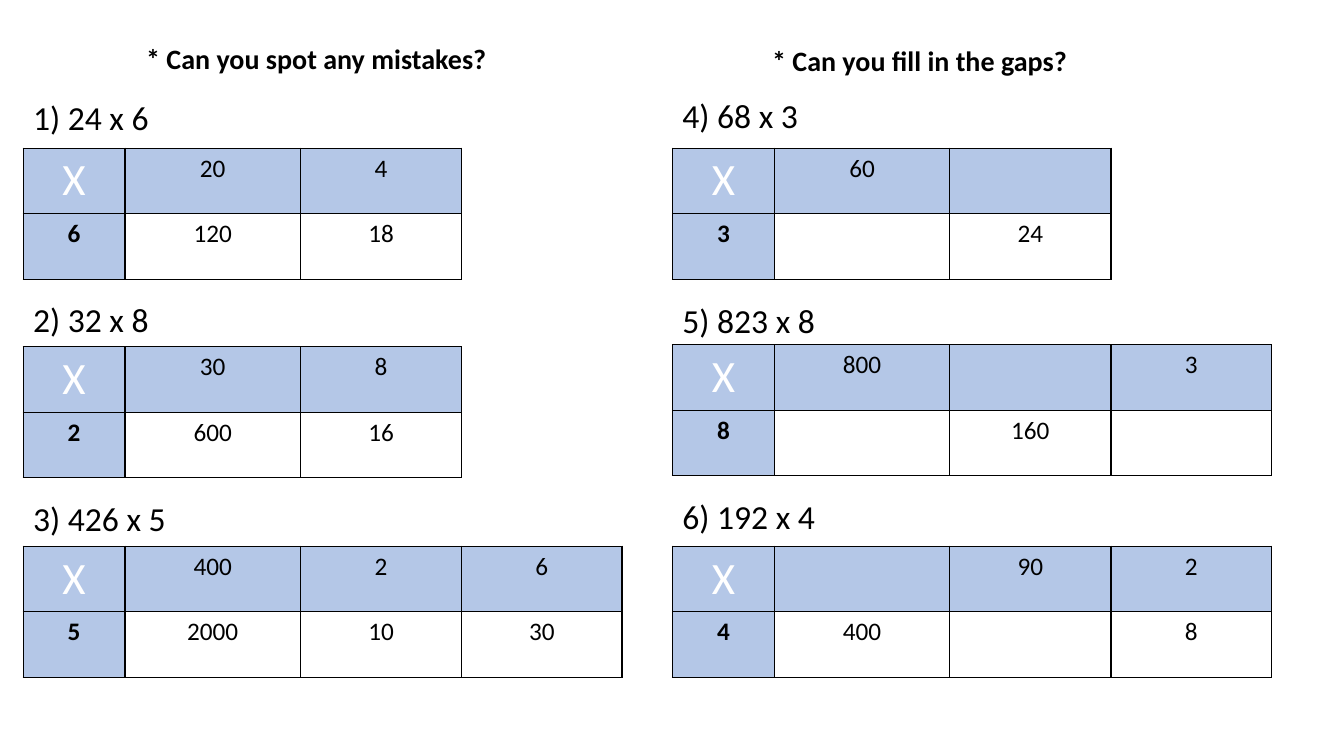
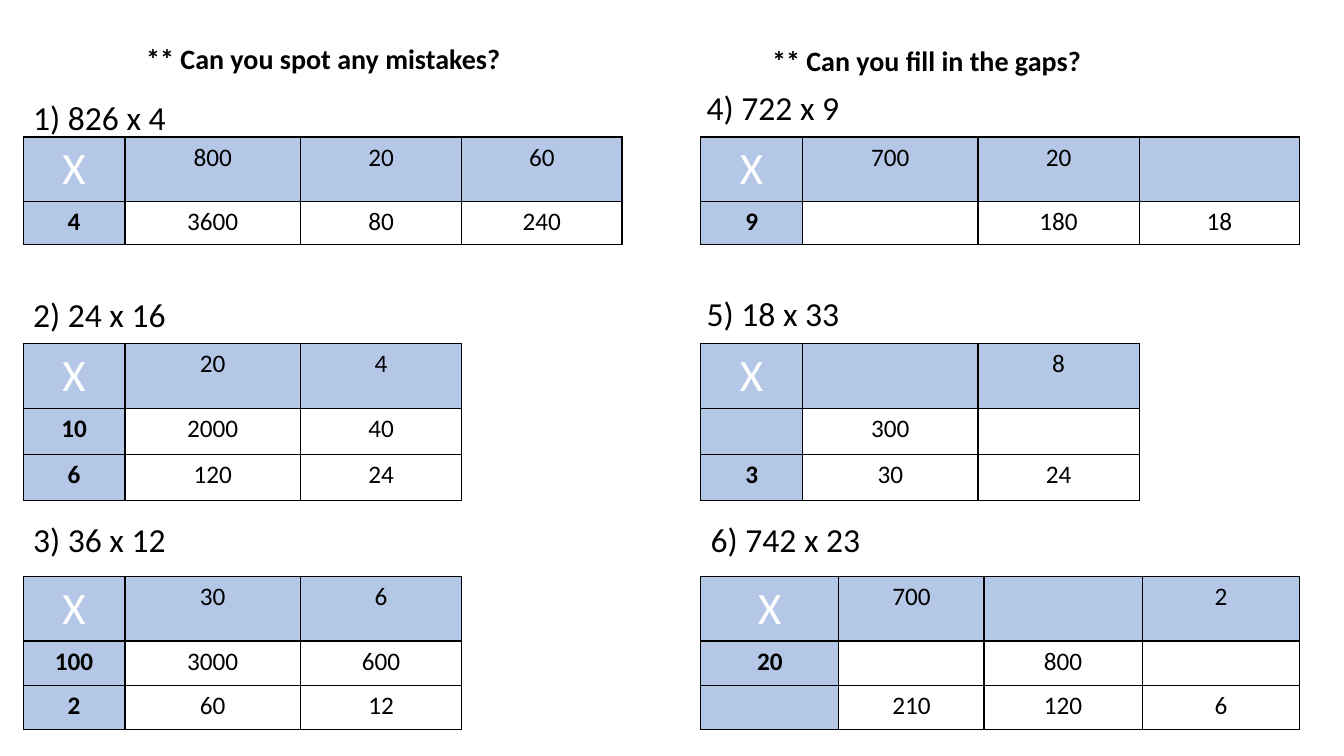
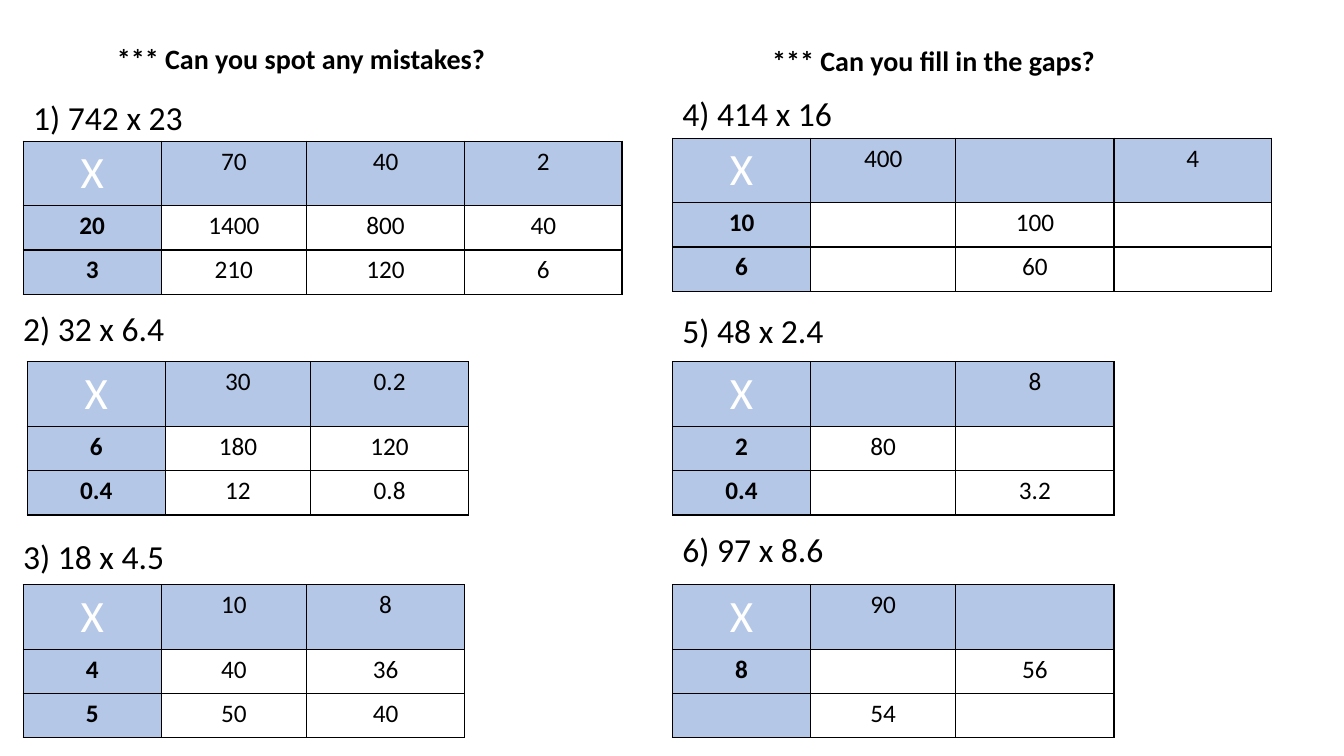
import dataclasses

import lxml.etree
import pptx
import pptx.dml.color
import pptx.enum.text
import pptx.oxml.ns
import pptx.util

PX = 9144


@dataclasses.dataclass(frozen=True)
class Theme:
    font: str = "Calibri"
    ink: str = "000000"
    sign: str = "FFFFFF"
    band: str = "B4C7E7"
    heading_size: int = 20
    question_size: int = 24
    number_size: int = 18
    sign_size: int = 32
    border: int = 1


@dataclasses.dataclass(frozen=True)
class Exercise:
    question: str
    question_at: tuple
    grid_at: tuple
    columns: tuple
    row_heights: tuple
    numbers: tuple


THEME = Theme()
NARROW = (101, 174, 160, 159)
WIDE = (137, 144, 157, 156)
TALL = (65, 65)
SINGLE = (64, 43)
ROOMY = (64, 46, 46)
COMPACT = (64, 44, 44)

WORKSHEETS = (
    ("*", 135, (
        Exercise("1) 24 x 6", (23, 91), (23, 147), NARROW, TALL,
                 (("X", "20", "4"), ("6", "120", "18"))),
        Exercise("2) 32 x 8", (23, 292), (23, 344), NARROW, TALL,
                 (("X", "30", "8"), ("2", "600", "16"))),
        Exercise("3) 426 x 5", (23, 489), (23, 542), NARROW, TALL,
                 (("X", "400", "2", "6"), ("5", "2000", "10", "30"))),
        Exercise("4) 68 x 3", (667, 89), (667, 147), NARROW, TALL,
                 (("X", "60", ""), ("3", "", "24"))),
        Exercise("5) 823 x 8", (667, 293), (667, 342), NARROW, TALL,
                 (("X", "800", "", "3"), ("8", "", "160", ""))),
        Exercise("6) 192 x 4", (667, 487), (667, 542), NARROW, TALL,
                 (("X", "", "90", "2"), ("4", "400", "", "8"))),
    )),
    ("**", 135, (
        Exercise("1) 826 x 4", (23, 91), (23, 136), NARROW, SINGLE,
                 (("X", "800", "20", "60"), ("4", "3600", "80", "240"))),
        Exercise("2) 24 x 16", (23, 287), (23, 341), NARROW, ROOMY,
                 (("X", "20", "4"), ("10", "2000", "40"), ("6", "120", "24"))),
        Exercise("3) 36 x 12", (23, 510), (23, 572), NARROW, COMPACT,
                 (("X", "30", "6"), ("100", "3000", "600"), ("2", "60", "12"))),
        Exercise("4) 722 x 9", (691, 81), (695, 136), NARROW, SINGLE,
                 (("X", "700", "20", ""), ("9", "", "180", "18"))),
        Exercise("5) 18 x 33", (691, 286), (695, 341), NARROW, ROOMY,
                 (("X", "", "8"), ("", "300", ""), ("3", "30", "24"))),
        Exercise("6) 742 x 23", (695, 510), (695, 572), WIDE, COMPACT,
                 (("X", "700", "", "2"), ("20", "", "800", ""), ("", "210", "120", "6"))),
    )),
    ("***", 106, (
        Exercise("1) 742 x 23", (23, 91), (23, 140), WIDE, COMPACT,
                 (("X", "70", "40", "2"), ("20", "1400", "800", "40"), ("3", "210", "120", "6"))),
        Exercise("2) 32 x 6.4", (13, 301), (27, 359), WIDE, COMPACT,
                 (("X", "30", "0.2"), ("6", "180", "120"), ("0.4", "12", "0.8"))),
        Exercise("3) 18 x 4.5", (13, 527), (23, 580), WIDE, COMPACT,
                 (("X", "10", "8"), ("4", "40", "36"), ("5", "50", "40"))),
        Exercise("4) 414 x 16", (667, 87), (667, 137), WIDE, COMPACT,
                 (("X", "400", "", "4"), ("10", "", "100", ""), ("6", "", "60", ""))),
        Exercise("5) 48 x 2.4", (667, 303), (667, 359), WIDE, COMPACT,
                 (("X", "", "8"), ("2", "80", ""), ("0.4", "", "3.2"))),
        Exercise("6) 97 x 8.6", (667, 520), (667, 580), WIDE, COMPACT,
                 (("X", "90", ""), ("8", "", "56"), ("", "54", ""))),
    )),
)


def px(*lengths):
    return [pptx.util.Emu(length * PX) for length in lengths]


def write(paragraph, text, size, bold=False, color=THEME.ink, align="LEFT"):
    paragraph.alignment = getattr(pptx.enum.text.PP_ALIGN, align)
    run = paragraph.add_run()
    run.text = text
    run.font.name = THEME.font
    run.font.size = pptx.util.Pt(size)
    run.font.bold = bold
    run.font.color.rgb = pptx.dml.color.RGBColor.from_string(color)


def fill_line(holder, box, text, size, bold=False):
    holder.left, holder.top, holder.width, holder.height = px(*box)
    frame = holder.text_frame
    frame.word_wrap = True
    frame.auto_size = pptx.enum.text.MSO_AUTO_SIZE.SHAPE_TO_FIT_TEXT
    frame.vertical_anchor = pptx.enum.text.MSO_ANCHOR.TOP
    write(frame.paragraphs[0], text, size, bold)


def add_line(slide, box, text, size, bold=False):
    fill_line(slide.shapes.add_textbox(*px(*box)), box, text, size, bold)


def outline(cell):
    properties = cell._tc.get_or_add_tcPr()
    qn = pptx.oxml.ns.qn
    for side in ("lnL", "lnR", "lnT", "lnB"):
        edge = lxml.etree.SubElement(properties, qn(f"a:{side}"),
                                     w=str(pptx.util.Pt(THEME.border)))
        paint = lxml.etree.SubElement(edge, qn("a:solidFill"))
        lxml.etree.SubElement(paint, qn("a:srgbClr"), val=THEME.ink)


def fill_cell(cell, number, is_top, is_side):
    outline(cell)
    if is_top or is_side:
        cell.fill.solid()
        cell.fill.fore_color.rgb = pptx.dml.color.RGBColor.from_string(THEME.band)
    else:
        cell.fill.background()
    paragraph = cell.text_frame.paragraphs[0]
    if is_top and is_side:
        write(paragraph, number, THEME.sign_size, color=THEME.sign, align="CENTER")
    elif number:
        write(paragraph, number, THEME.number_size, bold=is_side, align="CENTER")


def add_grid(slide, exercise):
    widths = exercise.columns[:len(exercise.numbers[0])]
    heights = exercise.row_heights
    grid = slide.shapes.add_table(
        len(heights), len(widths),
        *px(*exercise.grid_at, sum(widths), sum(heights))).table
    grid.first_row = False
    grid.horz_banding = False
    for column, width in zip(grid.columns, px(*widths)):
        column.width = width
    for row, height in zip(grid.rows, px(*heights)):
        row.height = height
    for r, numbers in enumerate(exercise.numbers):
        for c, number in enumerate(numbers):
            fill_cell(grid.cell(r, c), number, r == 0, c == 0)


def add_worksheet(deck, stars, heading_left, exercises):
    slide = deck.slides.add_slide(deck.slide_layouts[5])
    fill_line(slide.shapes.title, (heading_left, 36, 399, 44),
              f"{stars} Can you spot any mistakes?", THEME.heading_size, True)
    add_line(slide, (756, 38, 369, 44),
             f"{stars} Can you fill in the gaps?", THEME.heading_size, True)
    for exercise in exercises:
        add_grid(slide, exercise)
        add_line(slide, (*exercise.question_at, 249, 50),
                 exercise.question, THEME.question_size)


def main():
    deck = pptx.Presentation()
    deck.slide_width, deck.slide_height = px(1333, 750)
    for worksheet in WORKSHEETS:
        add_worksheet(deck, *worksheet)
    deck.save("out.pptx")


if __name__ == "__main__":
    main()
